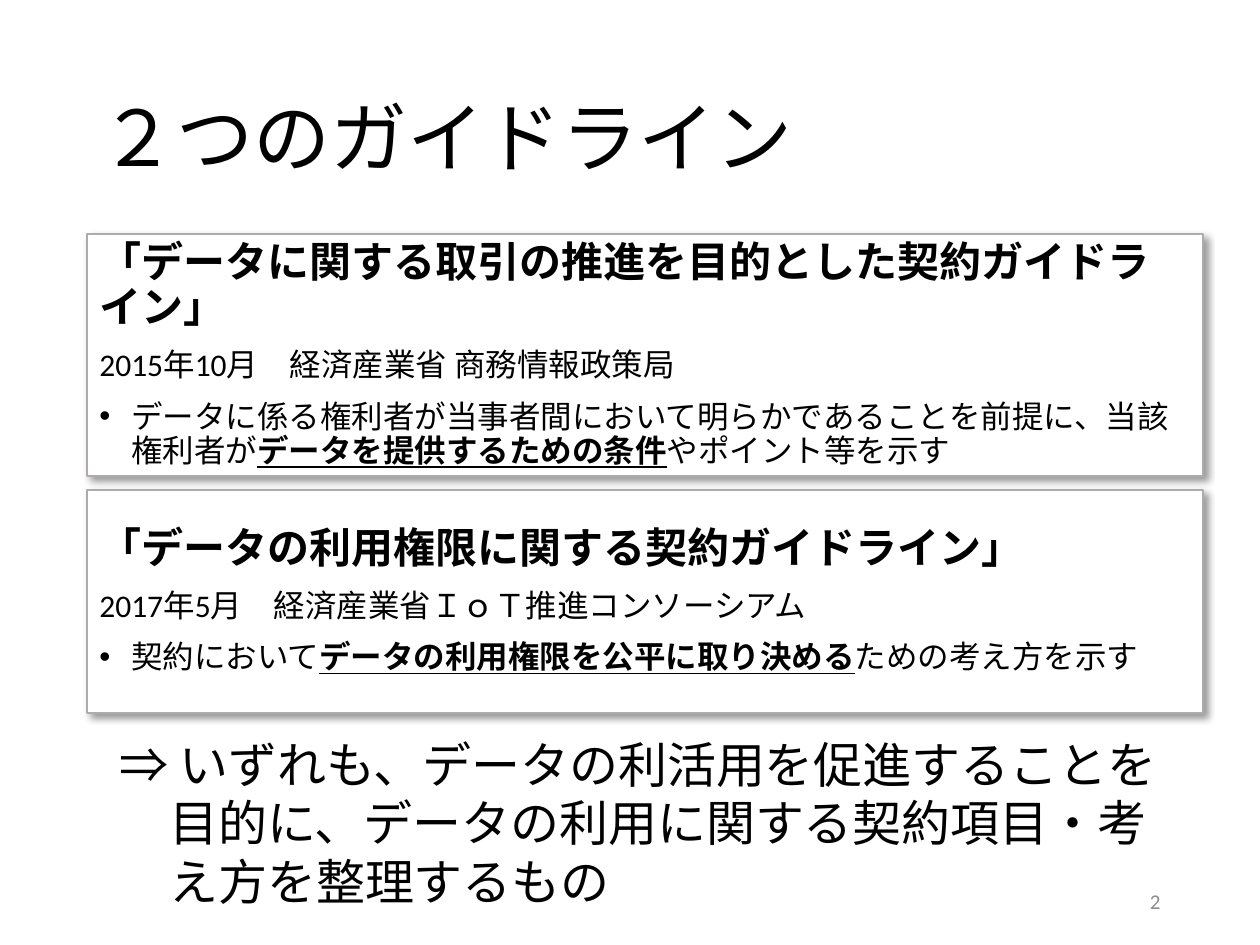
from lxml import etree
from pptx import Presentation
from pptx.dml.color import RGBColor
from pptx.enum.shapes import MSO_SHAPE
from pptx.enum.text import MSO_ANCHOR, PP_ALIGN
from pptx.oxml import parse_xml
from pptx.oxml.ns import qn
from pptx.util import Pt

PX = 7257  # EMU per px, 126 px to the inch
RECTANGLE = MSO_SHAPE.RECTANGLE
TOP, MIDDLE = MSO_ANCHOR.TOP, MSO_ANCHOR.MIDDLE
LEFT, RIGHT = PP_ALIGN.LEFT, PP_ALIGN.RIGHT
INDENT = 32
SHADOW = (
    '<a:effectLst xmlns:a="http://schemas.openxmlformats.org/drawingml/2006/main">'
    '<a:outerShdw blurRad="50800" dist="38100" dir="2700000" algn="tl" rotWithShape="0">'
    '<a:srgbClr val="000000"><a:alpha val="40000"/></a:srgbClr>'
    '</a:outerShdw></a:effectLst>'
)


def format_span(span, size, bold=False, color="000000"):
    span.font.name = "Calibri"
    span.font.size = Pt(size)
    span.font.bold = bold
    span.font.color.rgb = RGBColor.from_string(color)


def hang(para, indent):
    """Indent a paragraph and hang its first line back by the same px."""
    properties = para._p.get_or_add_pPr()
    properties.set("marL", str(indent * PX))
    properties.set("indent", str(-indent * PX))
    return properties


deck = Presentation()
deck.slide_width, deck.slide_height = 1260 * PX, 945 * PX
page = deck.slides.add_slide(deck.slide_layouts[6])

# Title, conclusion and page number: place, text, size, colour, anchor, alignment, line spacing, indent
labels = [
    ((87, 50, 1086, 183), "２つのガイドライン", 44, "000000", MIDDLE, LEFT, 0.9, 0),
    ((107, 728, 1097, 190),
     "⇒ いずれも、データの利活用を促進することを目的に、データの利用に関する契約項目・考え方を整理するもの",
     28, "000000", TOP, LEFT, 1.0, 50),
    ((890, 876, 283, 50), "2", 12, "8C8C8C", MIDDLE, RIGHT, 1.0, 0),
]
for place, text, size, color, anchor, align, spacing, indent in labels:
    box = page.shapes.add_textbox(*(value * PX for value in place))
    frame = box.text_frame
    frame.word_wrap = True
    frame.vertical_anchor = anchor
    frame.text = text
    para = frame.paragraphs[0]
    para.alignment = align
    para.line_spacing = spacing
    if indent:
        hang(para, indent)
    format_span(para.runs[0], size, color=color)

# Guideline cards: top, height, name, date and issuer, summary (before, key phrase, after)
guidelines = [
    (234, 242, "「データに関する取引の推進を目的とした契約ガイドライン」",
     "2015年10月　経済産業省 商務情報政策局",
     ("データに係る権利者が当事者間において明らかであることを前提に、当該権利者が",
      "データを提供するための条件", "やポイント等を示す")),
    (490, 223, "「データの利用権限に関する契約ガイドライン」",
     "2017年5月　経済産業省ＩｏＴ推進コンソーシアム",
     ("契約において", "データの利用権限を公平に取り決める", "ための考え方を示す")),
]
for top, height, name, issued, summary in guidelines:
    card = page.shapes.add_shape(RECTANGLE, 87 * PX, top * PX, 1116 * PX, height * PX)
    card.fill.solid()
    card.fill.fore_color.rgb = RGBColor.from_string("FFFFFF")
    card.line.color.rgb = RGBColor.from_string("AFABAB")
    card.line.width = Pt(1.5)
    card._element.spPr.append(parse_xml(SHADOW))

    frame = card.text_frame
    frame.word_wrap = True
    frame.vertical_anchor = MIDDLE
    frame.text = "\n".join([name, issued, ""])
    for para in frame.paragraphs:
        para.alignment = LEFT
        para.line_spacing = 0.9
        para.space_before = Pt(10)
    heading, source, bullet = frame.paragraphs
    format_span(heading.runs[0], 24, bold=True)
    format_span(source.runs[0], 18)

    properties = hang(bullet, INDENT)
    etree.SubElement(properties, qn("a:buFont")).set("typeface", "Arial")
    etree.SubElement(properties, qn("a:buChar")).set("char", "•")
    for text, is_key in zip(summary, (False, True, False)):
        span = bullet.add_run()
        span.text = text
        format_span(span, 18, bold=is_key)
        span.font.underline = is_key

deck.save("out.pptx")
